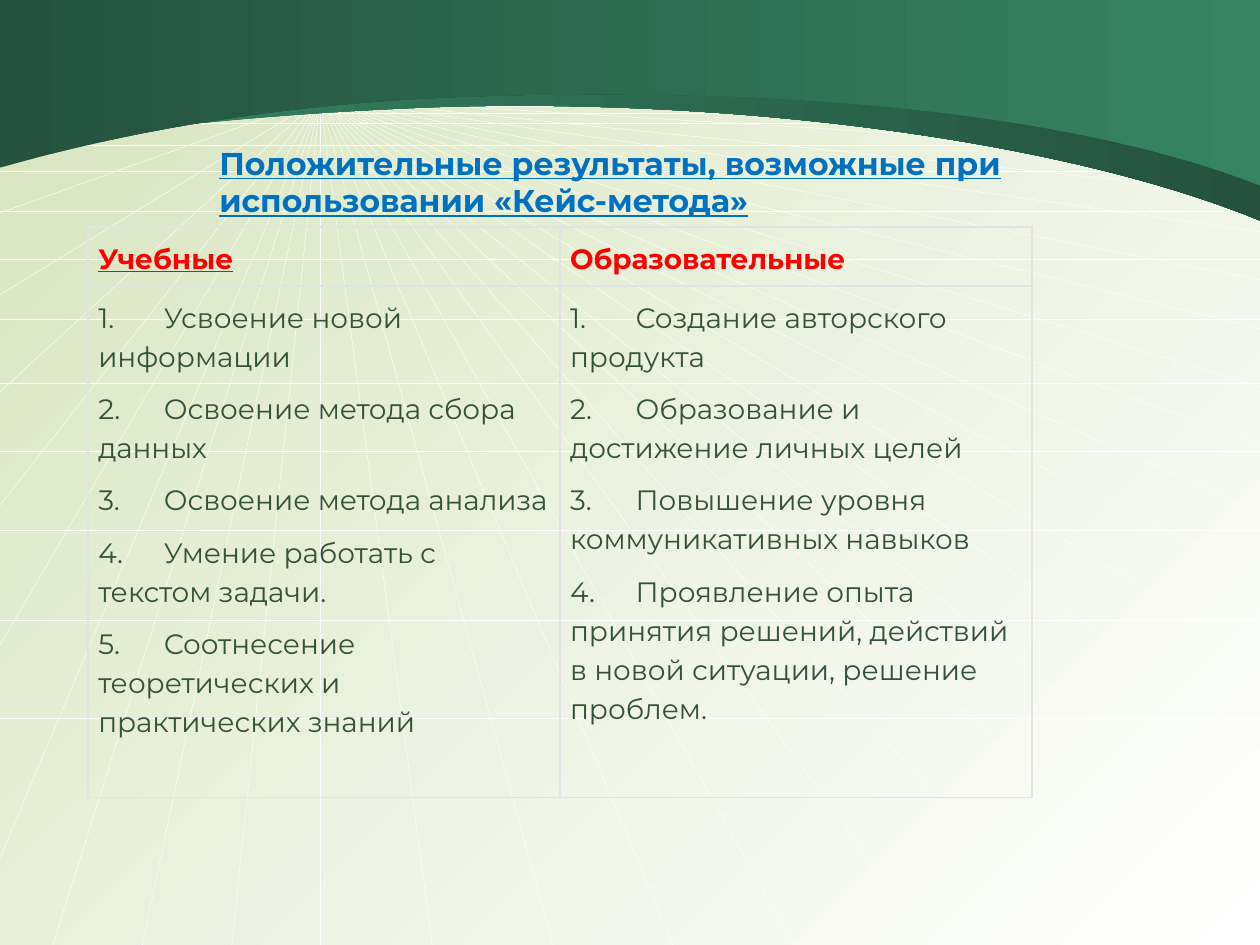
from dataclasses import dataclass

from lxml.etree import SubElement
from pptx import Presentation
from pptx.dml.color import RGBColor
from pptx.enum.shapes import MSO_CONNECTOR
from pptx.enum.text import MSO_ANCHOR, MSO_AUTO_SIZE, PP_ALIGN
from pptx.oxml.ns import qn
from pptx.util import Inches, Pt


@dataclass(frozen=True)
class Theme:
    font: str = "Montserrat"
    title_size: int = 18
    table_size: int = 16
    title: str = "0070C0"
    heading: str = "FF0000"
    body: str = "335338"
    border: str = "E3E3E3"
    ray: str = "FFFFFF"
    background: tuple = ("D7E4BE", "FFFFFF")
    back_wave: tuple = ("368463", "24523F")
    front_wave: tuple = ("24523F", "368463")


THEME = Theme()
WIDTH, HEIGHT = 10, 7.5

VANISHING_POINT = (2.54, 0.78)
RAYS_RIGHT = (1, 1.23, 1.54, 1.84, 2.22, 2.61, 3.07, 3.53, 4.06, 4.59, 5.2, 5.89, 6.8)
RAYS_BOTTOM = (0.42, 1.13, 1.84, 2.54, 3.43, 4.39, 5.34, 6.3, 7.38, 8.46, 9.6)
RAYS_LEFT = (0.78, 0.97, 1.16, 1.69, 2.34, 3.11, 4.01, 5.12, 6.81)
HORIZONTALS = (0.84, 0.9, 0.98, 1.15, 1.36, 1.68, 2.06, 2.53, 3.04, 3.58, 4.21, 4.92, 5.7)

# Each wave edge: a start point, then Bezier segments of two controls and an end.
BACK_WAVE = ((0, 1.19), [((0.11, 1.18), (1.33, 0.93), (3.47, 0.85)),
                         ((5.61, 0.78), (8.31, 1.06), (10, 1.75))])
FRONT_WAVE = ((0, 1.33), [((0.11, 1.31), (1.51, 0.85), (3.64, 0.77)),
                          ((5.77, 0.69), (8.31, 0.81), (10, 1.47))])

TITLE = "Положительные результаты, возможные при использовании «Кейс-метода»"
RESULTS = {
    "Учебные": [
        "Усвоение новой информации",
        "Освоение метода сбора данных",
        "Освоение метода анализа",
        "Умение работать с текстом задачи.",
        "Соотнесение теоретических и практических знаний",
    ],
    "Образовательные": [
        "Создание авторского продукта",
        "Образование и достижение личных целей",
        "Повышение уровня коммуникативных навыков",
        "Проявление опыта принятия решений, действий в новой ситуации, решение проблем.",
    ],
}


def to_emu(point):
    return tuple(Inches(value) for value in point)


def fill_gradient(fill, colors, angle=0):
    fill.gradient()
    fill.gradient_angle = angle
    for stop, color, position in zip(fill.gradient_stops, colors, (0, 1)):
        stop.color.rgb = RGBColor.from_string(color)
        stop.position = position


def style_font(font, size, color, bold=False, underline=False):
    font.name = THEME.font
    font.size = Pt(size)
    font.color.rgb = RGBColor.from_string(color)
    font.bold = bold
    font.underline = underline


def add_ray(shapes, start, end):
    line = shapes.add_connector(MSO_CONNECTOR.STRAIGHT, *to_emu(start), *to_emu(end))
    line.line.color.rgb = RGBColor.from_string(THEME.ray)
    line.line.width = Pt(0.25)
    SubElement(line.element.spPr, qn("a:effectLst"))


def add_perspective_grid(slide, width, height):
    grid = slide.shapes.add_group_shape()
    ends = [(width, y) for y in RAYS_RIGHT]
    ends += [(x, height) for x in RAYS_BOTTOM]
    ends += [(0, y) for y in RAYS_LEFT]
    for end in ends:
        add_ray(grid.shapes, VANISHING_POINT, end)
    for y in HORIZONTALS:
        add_ray(grid.shapes, (0, y), (width, y))
    return grid


def add_wave(slide, edge, colors, width):
    """Fill the band between the top of the slide and a curved edge."""
    start, segments = edge
    corners = [start] + [segment[-1] for segment in segments] + [(width, 0)]
    builder = slide.shapes.build_freeform(0, 0)
    builder.add_line_segments([to_emu(corner) for corner in corners], close=True)
    wave = builder.convert_to_shape()
    straight_lines = list(wave.element.iter(qn("a:lnTo")))
    for straight, segment in zip(straight_lines[1:], segments):
        straight.tag = qn("a:cubicBezTo")
        straight.remove(straight[0])
        for x, y in map(to_emu, segment):
            SubElement(straight, qn("a:pt"), x=str(x), y=str(y))
    wave.shadow.inherit = False
    wave.line.fill.background()
    fill_gradient(wave.fill, colors)
    return wave


def move_to_layout(layout, shapes):
    """Put the backdrop behind the slide, with ids that are free in the layout."""
    tree = layout.placeholders[0].element.getparent()
    for shape in shapes:
        for properties in shape.element.iter(qn("p:cNvPr")):
            properties.set("id", str(int(properties.get("id")) + 100))
        tree.append(shape.element)


def add_backdrop(slide, width, height):
    grid = add_perspective_grid(slide, width, height)
    waves = [add_wave(slide, BACK_WAVE, THEME.back_wave, width),
             add_wave(slide, FRONT_WAVE, THEME.front_wave, width)]
    move_to_layout(slide.slide_layout, [grid, *waves])


def add_title(slide, left, top, width, height):
    title = slide.shapes.title
    title.left, title.top = Inches(left), Inches(top)
    title.width, title.height = Inches(width), Inches(height)
    text_frame = title.text_frame
    text_frame.text = TITLE
    text_frame.word_wrap = True
    text_frame.auto_size = MSO_AUTO_SIZE.SHAPE_TO_FIT_TEXT
    text_frame.vertical_anchor = MSO_ANCHOR.TOP
    paragraph = text_frame.paragraphs[0]
    paragraph.alignment = PP_ALIGN.LEFT
    style_font(paragraph.runs[0].font, THEME.title_size, THEME.title, True, True)


def format_cell(cell):
    properties = cell._tc.get_or_add_tcPr()
    for side in ("a:lnL", "a:lnR", "a:lnT", "a:lnB"):
        border = SubElement(properties, qn(side), w=str(Pt(1)))
        solid = SubElement(border, qn("a:solidFill"))
        SubElement(solid, qn("a:srgbClr"), val=THEME.border)
    cell.fill.background()
    cell.margin_left = cell.margin_right = Inches(0.08)
    cell.margin_top = cell.margin_bottom = Inches(0.08)


def write_cell(cell, lines, color, bold=False, underline=False, tab=None):
    format_cell(cell)
    cell.text_frame.text = "\n".join(lines)
    for paragraph in cell.text_frame.paragraphs:
        paragraph.line_spacing = 1.15
        paragraph.space_after = Pt(7.5)
        if tab:
            tabs = SubElement(paragraph._p.get_or_add_pPr(), qn("a:tabLst"))
            SubElement(tabs, qn("a:tab"), pos=str(Inches(tab)), algn="l")
        for run in paragraph.runs:
            style_font(run.font, THEME.table_size, color, bold, underline)


def add_results_table(slide, left, top, width, height, header_height=0.47):
    table = slide.shapes.add_table(
        2, len(RESULTS), Inches(left), Inches(top), Inches(width), Inches(height)).table
    table.first_row = table.horz_banding = False
    table.rows[0].height = Inches(header_height)
    table.rows[1].height = Inches(height - header_height)
    for column, (heading, results) in enumerate(RESULTS.items()):
        write_cell(table.cell(0, column), [heading], THEME.heading,
                   bold=True, underline=column == 0)
        numbered = [f"{number}.\t{result}" for number, result in enumerate(results, 1)]
        write_cell(table.cell(1, column), numbered, THEME.body, tab=0.52)


def main():
    presentation = Presentation()
    presentation.slide_width = Inches(WIDTH)
    presentation.slide_height = Inches(HEIGHT)
    slide = presentation.slides.add_slide(presentation.slide_layouts[5])
    fill_gradient(slide.background.fill, THEME.background, angle=315)
    add_backdrop(slide, WIDTH, HEIGHT)
    add_title(slide, 1.64, 1.09, 6.56, 0.71)
    add_results_table(slide, 0.7, 1.8, 7.49, 4.53)
    presentation.save("out.pptx")


if __name__ == "__main__":
    main()
